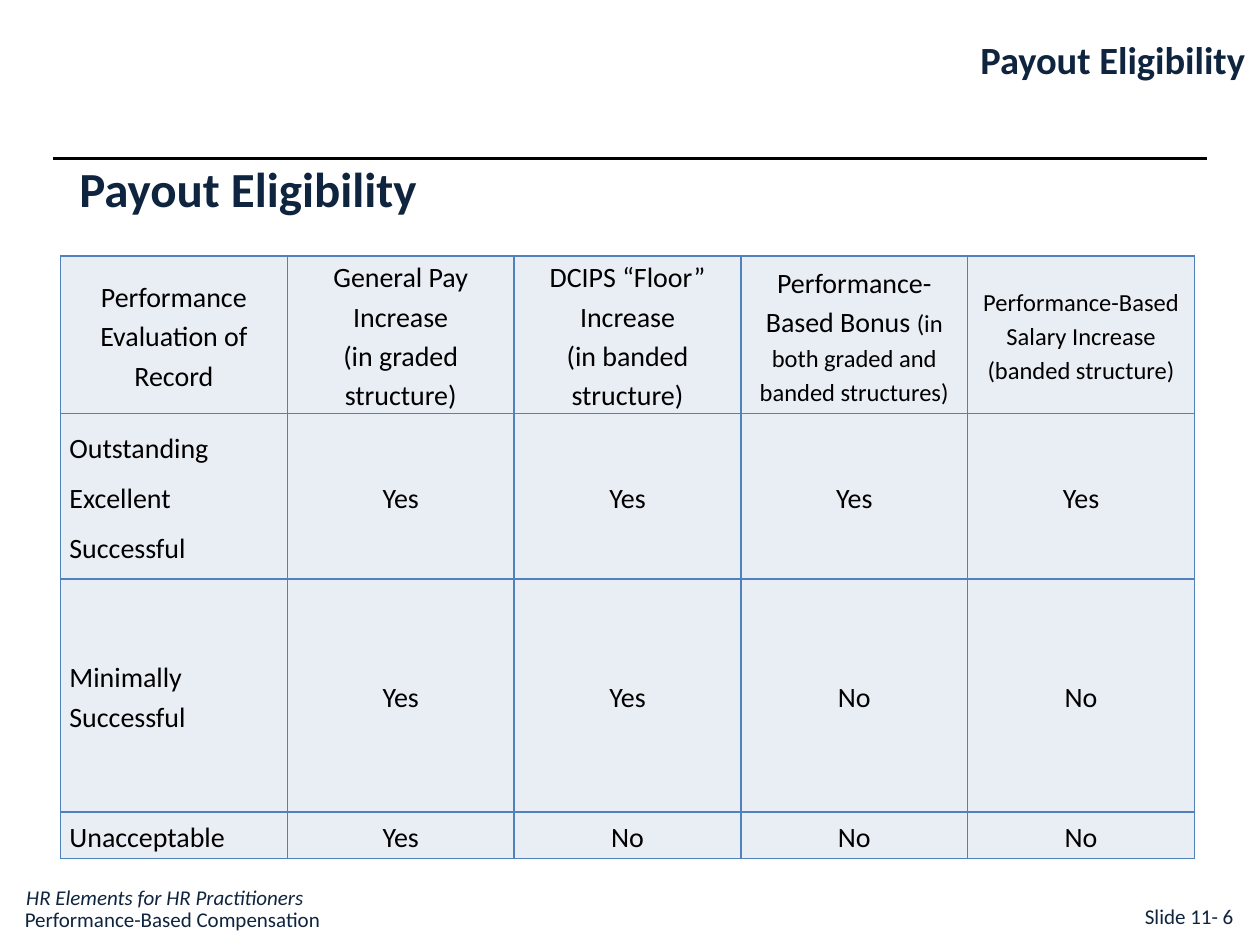
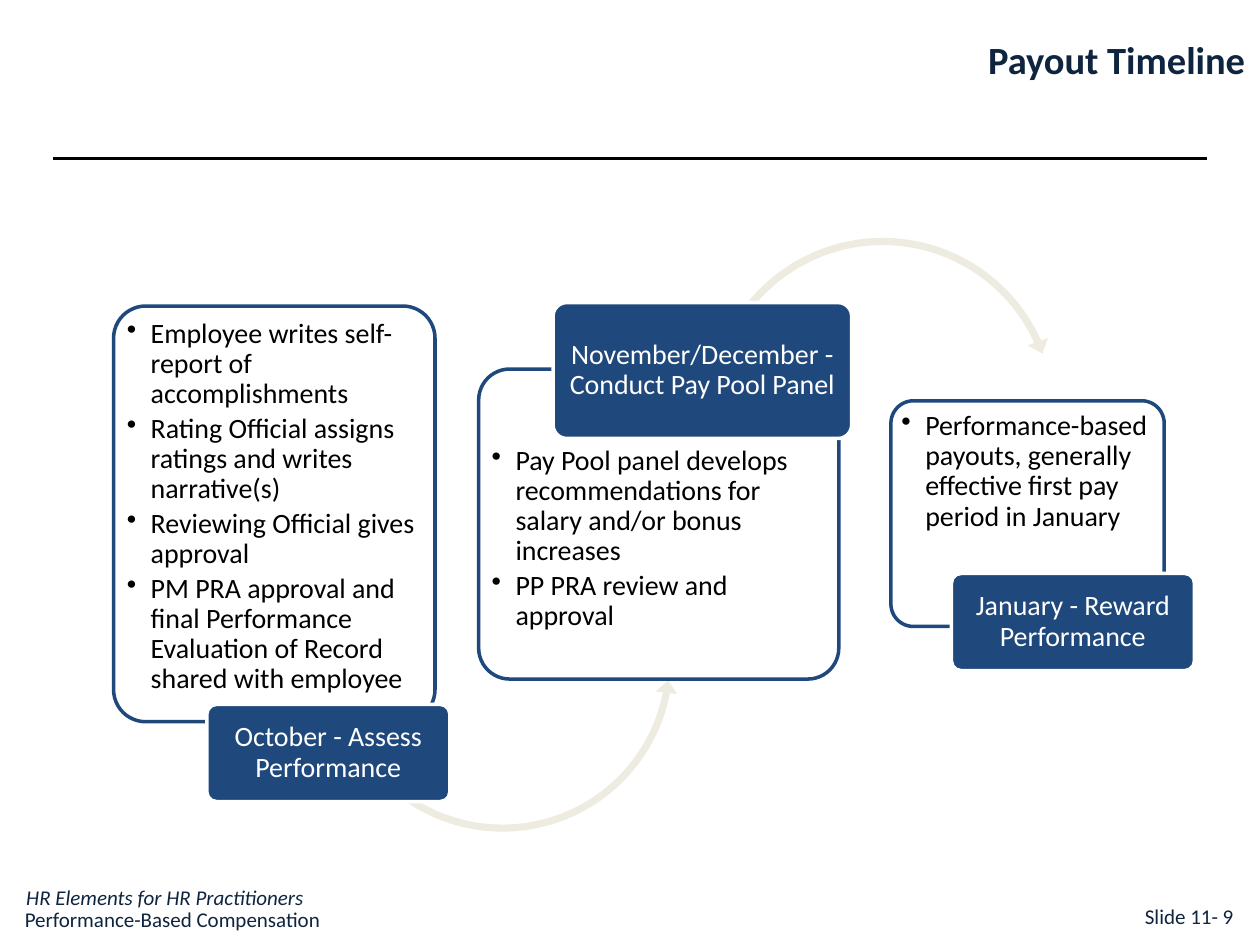
from lxml.etree import SubElement
from pptx import Presentation
from pptx.dml.color import RGBColor
from pptx.enum.shapes import MSO_CONNECTOR, MSO_SHAPE
from pptx.enum.text import MSO_ANCHOR, PP_ALIGN
from pptx.oxml.ns import qn
from pptx.util import Cm, Pt

FONT = "Calibri"
NAVY = RGBColor(0x0F, 0x24, 0x3E)
BLUE = RGBColor(0x1F, 0x49, 0x7D)
BORDER = RGBColor(0x4F, 0x81, 0xBD)
CELL = RGBColor(0xE9, 0xED, 0xF4)
SAND = RGBColor(0xEE, 0xEC, 0xE1)
WHITE = RGBColor(0xFF, 0xFF, 0xFF)
BLACK = RGBColor(0, 0, 0)

BREAK = "\v"
HEADERS = [
    [("Performance Evaluation of Record", 16)],
    [(f"General Pay Increase{BREAK}(in graded structure)", 16)],
    [(f"DCIPS “Floor” Increase{BREAK}(in banded structure)", 16)],
    [("Performance-Based Bonus ", 16), ("(in both graded and banded structures)", 14)],
    [("Performance-Based Salary Increase (banded structure)", 14)],
]
RATINGS = [
    (["Outstanding", "Excellent", "Successful"], ["Yes", "Yes", "Yes", "Yes"]),
    (["Minimally Successful"], ["Yes", "Yes", "No", "No"]),
    (["Unacceptable"], ["Yes", "No", "No", "No"]),
]
ROW_HEIGHTS = [3.18, 3.33, 4.7, 0.94]

ASSESS = [
    "Employee writes self-report of accomplishments",
    "Rating Official assigns ratings and writes narrative(s)",
    "Reviewing Official gives approval",
    "PM PRA approval and final Performance Evaluation of Record shared with employee",
]
PAY_POOL = [
    "Pay Pool panel develops recommendations for salary and/or bonus increases",
    "PP PRA review and approval",
]
REWARD = ["Performance-based payouts, generally effective first pay period in January"]


def cm_box(*lengths):
    return [Cm(length) for length in lengths]


def add_run(paragraph, text, size, color, bold=False, italic=False):
    for index, line in enumerate(text.split(BREAK)):
        if index:
            paragraph.add_line_break()
        run = paragraph.add_run()
        run.text = line
        font = run.font
        font.name, font.size, font.bold, font.italic = FONT, Pt(size), bold, italic
        font.color.rgb = color


def next_paragraph(frame, index):
    return frame.add_paragraph() if index else frame.paragraphs[0]


def add_label(slide, box, text, size=12, align=PP_ALIGN.LEFT, anchor=MSO_ANCHOR.TOP, **style):
    frame = slide.shapes.add_textbox(*cm_box(*box)).text_frame
    frame.word_wrap = True
    frame.vertical_anchor = anchor
    frame.paragraphs[0].alignment = align
    add_run(frame.paragraphs[0], text, size, NAVY, **style)


def add_filled(slide, preset, box, fill, adjustments=(), outline=None):
    shape = slide.shapes.add_shape(preset, *cm_box(*box))
    shape.shadow.inherit = False
    shape.fill.solid()
    shape.fill.fore_color.rgb = fill
    if outline is None:
        shape.line.fill.background()
    else:
        shape.line.color.rgb = outline
        shape.line.width = Pt(2)
    for index, value in enumerate(adjustments):
        shape.adjustments[index] = value
    return shape


def add_rule(slide):
    rule = slide.shapes.add_connector(MSO_CONNECTOR.STRAIGHT, *cm_box(1.07, 3.2, 24.33, 3.2))
    rule.line.color.rgb = BLACK
    rule.line.width = Pt(1.5)
    SubElement(rule._element.spPr, qn("a:effectLst"))


def add_page(deck, title, number):
    slide = deck.slides.add_slide(deck.slide_layouts[6])
    add_label(slide, (0.28, 17.7, 6.3, 1.02), "HR Elements for HR Practitioners", italic=True)
    add_rule(slide)
    add_label(slide, (11.43, 0.61, 13.92, 1.19), title, 22, PP_ALIGN.RIGHT, bold=True)
    page_tag = add_filled(slide, MSO_SHAPE.RECTANGLE, (22.83, 18.08, 2.51, 0.76), WHITE)
    page_tag.text_frame.paragraphs[0].alignment = PP_ALIGN.LEFT
    add_run(page_tag.text_frame.paragraphs[0], f"Slide 11- {number}", 12, NAVY)
    add_label(slide, (0.25, 18.16, 6.99, 0.76), "Performance-Based Compensation")
    return slide


def set_borders(cell):
    properties = cell._tc.get_or_add_tcPr()
    for position, side in enumerate(("lnL", "lnR", "lnT", "lnB")):
        edge = SubElement(properties, qn(f"a:{side}"), w=str(Pt(1)))
        properties.insert(position, edge)
        paint = SubElement(edge, qn("a:solidFill"))
        SubElement(paint, qn("a:srgbClr"), val=str(BORDER))


def fill_cell(cell, paragraphs, align):
    cell.fill.solid()
    cell.fill.fore_color.rgb = CELL
    cell.vertical_anchor = MSO_ANCHOR.MIDDLE
    cell.margin_left = cell.margin_right = Cm(0.18)
    cell.margin_top = cell.margin_bottom = 0
    for index, runs in enumerate(paragraphs):
        paragraph = next_paragraph(cell.text_frame, index)
        paragraph.alignment = align
        paragraph.line_spacing = 1.15
        paragraph.space_after = Pt(6)
        for text, size in runs:
            add_run(paragraph, text, size, BLACK)
    set_borders(cell)


def add_eligibility_table(slide):
    box = cm_box(1.22, 5.16, 22.86, sum(ROW_HEIGHTS))
    table = slide.shapes.add_table(len(ROW_HEIGHTS), len(HEADERS), *box).table
    for row, height in zip(table.rows, ROW_HEIGHTS):
        row.height = Cm(height)
    for column, header in enumerate(HEADERS):
        fill_cell(table.cell(0, column), [header], PP_ALIGN.CENTER)
    for row, (ratings, answers) in enumerate(RATINGS, 1):
        fill_cell(table.cell(row, 0), [[(rating, 16)] for rating in ratings], PP_ALIGN.LEFT)
        for column, answer in enumerate(answers, 1):
            fill_cell(table.cell(row, column), [[(answer, 16)]], PP_ALIGN.CENTER)


def set_margins(frame, side, top, bottom):
    frame.word_wrap = True
    frame.margin_left = frame.margin_right = Cm(side)
    frame.margin_top, frame.margin_bottom = Cm(top), Cm(bottom)


def add_steps_card(slide, box, steps, top=0.08):
    card = add_filled(slide, MSO_SHAPE.ROUNDED_RECTANGLE, box, WHITE, [0.1], BLUE)
    frame = card.text_frame
    set_margins(frame, 0.08, top, 0.08)
    frame.vertical_anchor = MSO_ANCHOR.TOP
    for index, step in enumerate(steps):
        paragraph = next_paragraph(frame, index)
        paragraph.alignment = PP_ALIGN.LEFT
        paragraph.line_spacing = 0.9
        paragraph.space_after = Pt(2.5)
        properties = paragraph._p.get_or_add_pPr()
        properties.set("marL", str(Cm(0.48)))
        properties.set("indent", str(-Cm(0.48)))
        SubElement(properties, qn("a:buChar"), char="•")
        add_run(paragraph, step, 16, BLACK)


def add_month_tag(slide, box, text):
    tag = add_filled(slide, MSO_SHAPE.ROUNDED_RECTANGLE, box, BLUE, [0.1], WHITE)
    frame = tag.text_frame
    set_margins(frame, 0.08, 0.05, 0.05)
    frame.vertical_anchor = MSO_ANCHOR.MIDDLE
    paragraph = frame.paragraphs[0]
    paragraph.alignment = PP_ALIGN.CENTER
    paragraph.line_spacing = 0.9
    add_run(paragraph, text, 16, WHITE)


def build_eligibility(deck):
    slide = add_page(deck, "Payout Eligibility", 6)
    add_eligibility_table(slide)
    add_label(slide, (1.35, 2.72, 14.35, 1.78), "Payout Eligibility", 28,
              anchor=MSO_ANCHOR.BOTTOM, bold=True)


def build_timeline(deck):
    slide = add_page(deck, "Payout Timeline", 9)
    add_steps_card(slide, (2.29, 6.17, 6.48, 8.38), ASSESS)
    add_filled(slide, MSO_SHAPE.LEFT_CIRCULAR_ARROW, (6.55, 9.75, 7.16, 7.16), SAND,
               [0.02, 2.64, 6.55, 76.4, 0.03])
    add_month_tag(slide, (4.17, 14.2, 4.9, 1.96), "October - Assess Performance")
    add_steps_card(slide, (9.65, 7.44, 7.26, 6.25), PAY_POOL, top=1.37)
    add_filled(slide, MSO_SHAPE.CIRCULAR_ARROW, (14.15, 4.65, 7.29, 7.29), SAND,
               [0.02, 2.58, 201.49, 131.58, 0.03])
    add_month_tag(slide, (11.15, 6.1, 6.02, 2.74), "November/December - Conduct Pay Pool Panel")
    add_steps_card(slide, (17.96, 8.08, 5.51, 4.55), REWARD)
    add_month_tag(slide, (19.18, 11.56, 4.9, 1.96), "January - Reward Performance")


def main():
    deck = Presentation()
    deck.slide_width, deck.slide_height = Cm(25.4), Cm(19.05)
    build_eligibility(deck)
    build_timeline(deck)
    deck.save("out.pptx")


if __name__ == "__main__":
    main()
